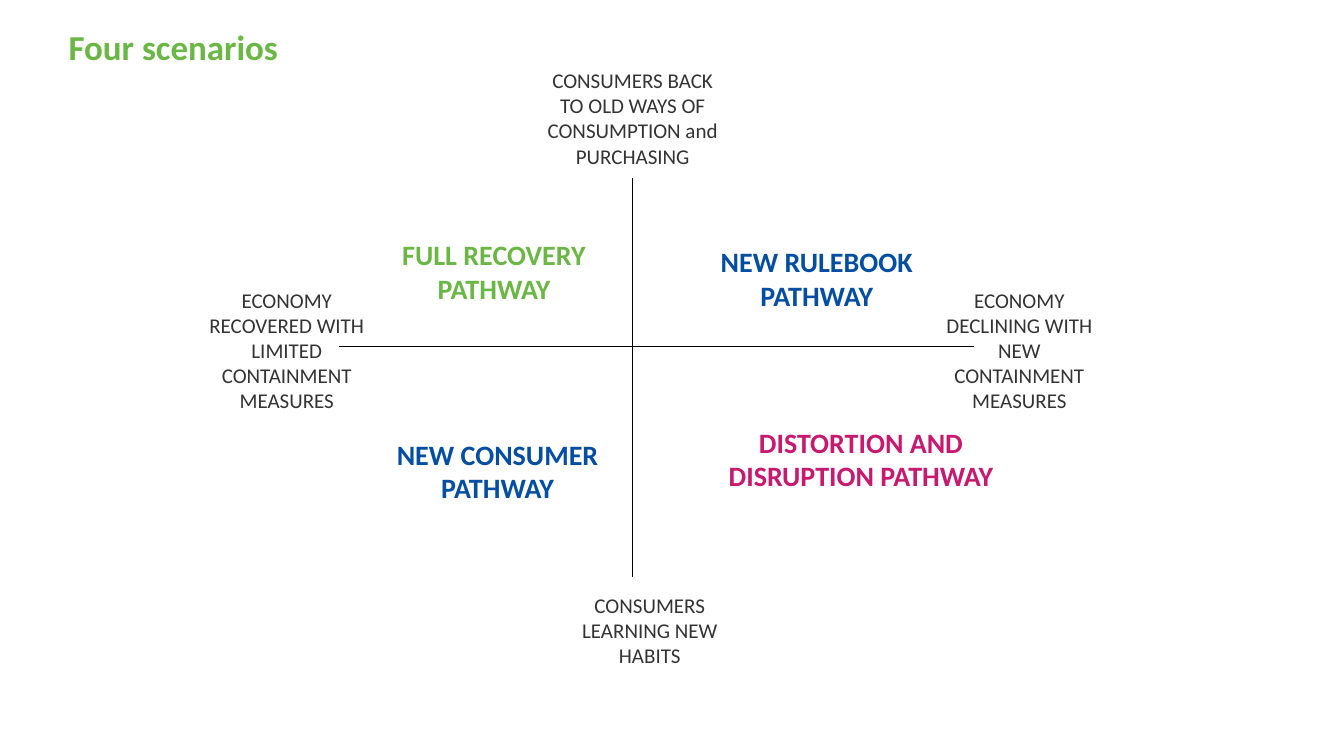
from pptx import Presentation
from pptx.dml.color import RGBColor
from pptx.enum.shapes import MSO_CONNECTOR
from pptx.enum.text import MSO_ANCHOR, MSO_AUTO_SIZE, PP_ALIGN
from pptx.oxml.ns import qn
from pptx.util import Pt
from lxml.etree import SubElement

COLORS = {
    "green": "6BB745",
    "blue": "034EA2",
    "magenta": "C6196F",
    "text": "333333",
    "axis": "000000",
}
SCALE = 9144

AXES = [(627, 177, 627, 572), (966, 344, 336, 344)]
SCENARIOS = [
    ("FULL RECOVERY PATHWAY", "green", (336, 231, 308, 77)),
    ("NEW CONSUMER PATHWAY", "blue", (336, 429, 315, 77)),
    ("NEW RULEBOOK PATHWAY", "blue", (654, 238, 312, 77)),
    ("DISTORTION AND DISRUPTION PATHWAY", "magenta", (672, 417, 364, 77)),
]
AXIS_ENDS = [
    ("CONSUMERS BACK TO OLD WAYS OF CONSUMPTION and PURCHASING", (529, 62, 197, 111)),
    ("CONSUMERS LEARNING NEW HABITS", (546, 583, 197, 86)),
    ("ECONOMY DECLINING WITH NEW CONTAINMENT MEASURES", (922, 280, 178, 136)),
    ("ECONOMY RECOVERED WITH LIMITED CONTAINMENT MEASURES", (186, 280, 197, 136)),
]


def emu(lengths):
    return [length * SCALE for length in lengths]


class ScenarioSlide:
    font = "Calibri"

    def __init__(self, deck):
        self.page = deck.slides.add_slide(deck.slide_layouts[5])

    def fill_text(self, box, text, size, color, bold, align):
        frame = box.text_frame
        frame.text = text
        frame.word_wrap = True
        frame.auto_size = MSO_AUTO_SIZE.NONE
        frame.vertical_anchor = MSO_ANCHOR.TOP
        para = frame.paragraphs[0]
        para.alignment = align
        for span in para.runs:
            span.font.name = self.font
            span.font.size = Pt(size)
            span.font.bold = bold
            span.font.color.rgb = RGBColor.from_string(COLORS[color])
        return para

    def title(self, text, bounds):
        box = self.page.shapes.title
        box.left, box.top, box.width, box.height = emu(bounds)
        para = self.fill_text(box, text, 25, "green", True, PP_ALIGN.LEFT)
        para.line_spacing = 0.8

    def label(self, text, bounds, size, color, bold=False):
        box = self.page.shapes.add_textbox(*emu(bounds))
        self.fill_text(box, text, size, color, bold, PP_ALIGN.CENTER)

    def axis(self, ends):
        line = self.page.shapes.add_connector(MSO_CONNECTOR.STRAIGHT, *emu(ends))
        line.line.color.rgb = RGBColor.from_string(COLORS["axis"])
        line.line.width = Pt(0.5)
        SubElement(line._element.spPr, qn("a:effectLst"))


def main():
    deck = Presentation()
    deck.slide_width, deck.slide_height = emu((1333, 750))
    slide = ScenarioSlide(deck)
    slide.title("Four scenarios", (58, 28, 685, 47))
    for text, color, bounds in SCENARIOS:
        slide.label(text, bounds, 20, color, bold=True)
    for ends in AXES:
        slide.axis(ends)
    for text, bounds in AXIS_ENDS:
        slide.label(text, bounds, 15, "text")
    deck.save("out.pptx")


if __name__ == "__main__":
    main()
